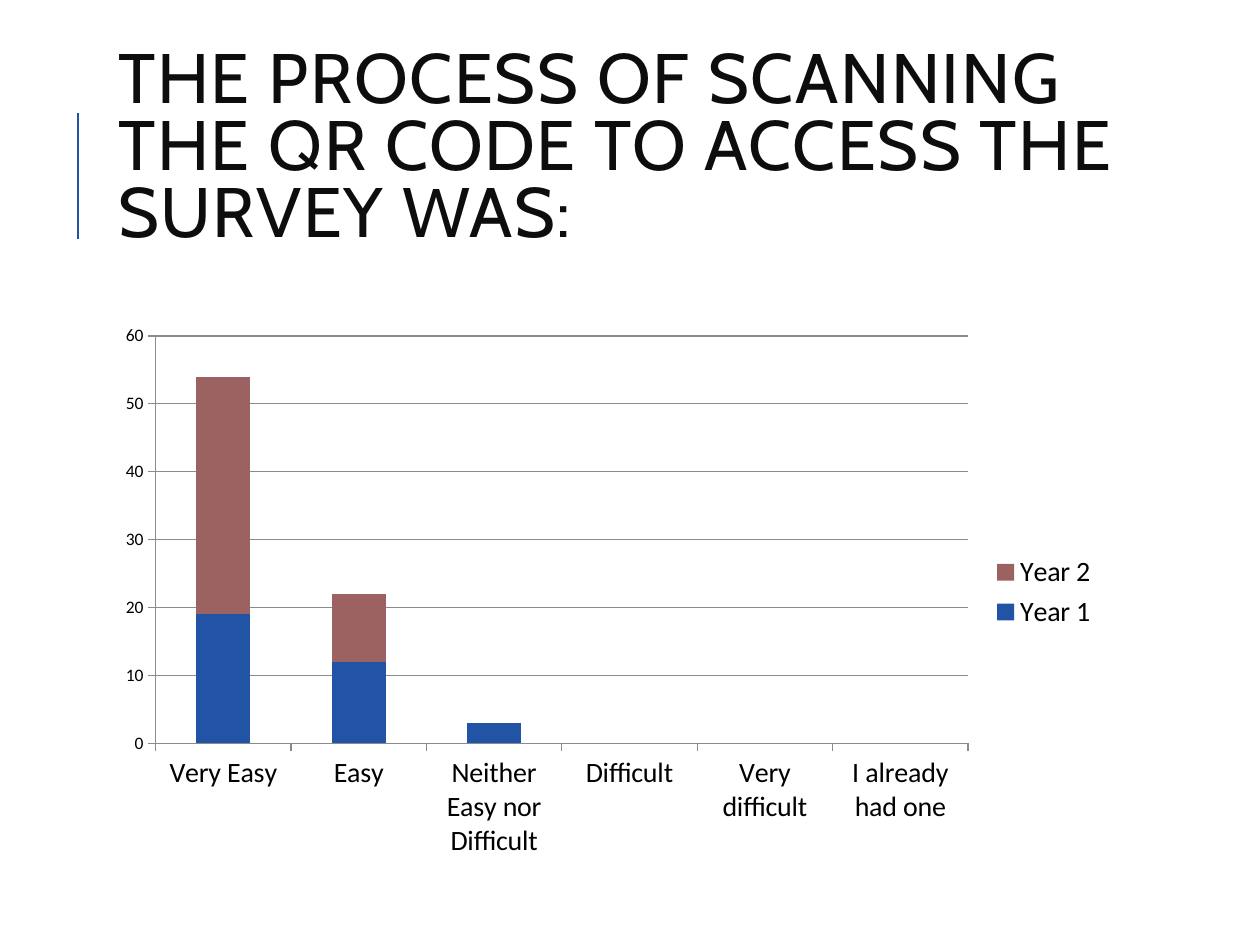
from lxml.etree import SubElement
from pptx import Presentation
from pptx.chart.data import CategoryChartData
from pptx.dml.color import RGBColor
from pptx.enum.chart import XL_CHART_TYPE, XL_LEGEND_POSITION, XL_TICK_MARK
from pptx.enum.shapes import MSO_CONNECTOR
from pptx.enum.text import MSO_ANCHOR, PP_ALIGN
from pptx.oxml.ns import qn
from pptx.util import Inches, Pt

COLORS = {
    "title": "0D0D0D",
    "text": "000000",
    "axis": "8B8B8B",
    "Year 1": "2254A6",
    "Year 2": "9B6261",
}
CATEGORIES = ["Very Easy", "Easy", "Neither Easy nor Difficult",
              "Difficult", "Very difficult", "I already had one"]
RESPONSES = {
    "Year 1": [19, 12, 3, None, None, None],
    "Year 2": [35, 10, None, None, None, None],
}


def color(name):
    return RGBColor.from_string(COLORS[name])


presentation = Presentation()
presentation.slide_width = Inches(10)
presentation.slide_height = Inches(7.5)
slide = presentation.slides.add_slide(presentation.slide_layouts[6])

accent_line = slide.shapes.add_connector(
    MSO_CONNECTOR.STRAIGHT, Inches(0.62), Inches(1.9), Inches(0.62), Inches(0.9))
accent_line.line.color.rgb = color("Year 1")
accent_line.line.width = Pt(1.5)
SubElement(accent_line._element.spPr, qn("a:effectLst"))

title = slide.shapes.add_textbox(Inches(0.84), Inches(0.64), Inches(8.57), Inches(1.64))
title_frame = title.text_frame
title_frame.word_wrap = True
title_frame.vertical_anchor = MSO_ANCHOR.MIDDLE
title_frame.margin_bottom = Inches(0.58)
paragraph = title_frame.paragraphs[0]
paragraph.alignment = PP_ALIGN.LEFT
paragraph.line_spacing = 0.8
paragraph.font.name = "Cabin"
paragraph.font.size = Pt(40)
paragraph.font.color.rgb = color("title")
run = paragraph.add_run()
run.text = "THE PROCESS OF SCANNING THE QR CODE TO ACCESS THE SURVEY WAS:"
run._r.get_or_add_rPr().set("spc", "100")

chart_data = CategoryChartData()
chart_data.categories = CATEGORIES
for name, values in RESPONSES.items():
    chart_data.add_series(name, values)
chart = slide.shapes.add_chart(
    XL_CHART_TYPE.COLUMN_STACKED, Inches(0.84), Inches(2.5),
    Inches(7.97), Inches(4.4), chart_data).chart
chart.has_title = False
chart.font.name = "Calibri"
chart.font.size = Pt(10)
chart.font.color.rgb = color("text")

plot = chart.plots[0]
plot.vary_by_categories = False
plot.gap_width = 150
plot.overlap = 100
for series in plot.series:
    series.format.fill.solid()
    series.format.fill.fore_color.rgb = color(series.name)

for axis in (chart.category_axis, chart.value_axis):
    axis.major_tick_mark = XL_TICK_MARK.OUTSIDE
    axis.minor_tick_mark = XL_TICK_MARK.NONE
    axis.format.line.color.rgb = color("axis")
    axis.format.line.width = Pt(0.75)
chart.value_axis.has_major_gridlines = True
gridline = chart.value_axis.major_gridlines.format.line
gridline.color.rgb = color("axis")
gridline.width = Pt(0.75)

chart.has_legend = True
chart.legend.position = XL_LEGEND_POSITION.RIGHT
chart.legend.include_in_layout = False
for font in (chart.category_axis.tick_labels.font, chart.legend.font):
    font.name = "Calibri"
    font.size = Pt(16)
    font.color.rgb = color("text")

presentation.save("out.pptx")
